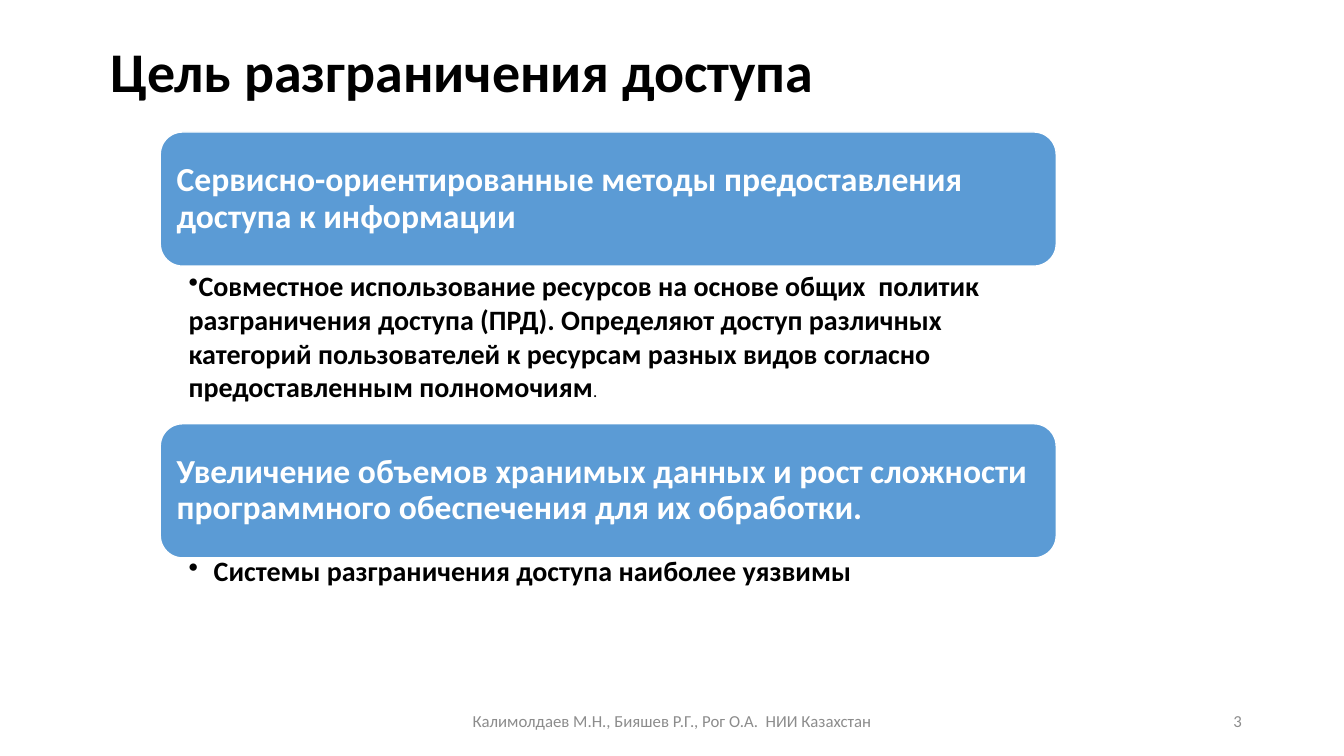
from lxml.etree import SubElement
from pptx import Presentation
from pptx.dml.color import RGBColor
from pptx.enum.shapes import MSO_SHAPE
from pptx.enum.text import MSO_ANCHOR, PP_ALIGN
from pptx.oxml.ns import qn
from pptx.util import Pt

BLACK = RGBColor(0x00, 0x00, 0x00)
WHITE = RGBColor(0xFF, 0xFF, 0xFF)
BLUE = RGBColor(0x5B, 0x9B, 0xD5)
GRAY = RGBColor(0x8C, 0x8C, 0x8C)

LIST_LEFT, LIST_WIDTH = 114.5, 640
HEADING_HEIGHT = 95.8
FOOTER_TOP, FOOTER_HEIGHT = 500.4, 28.8


class SlideBuilder:
    """Holds the text style and the current page."""

    font_name = "Calibri"

    def __init__(self, page):
        self.page = page

    def style(self, span, size, color, bold=False):
        span.font.name = self.font_name
        span.font.size = Pt(size)
        span.font.color.rgb = color
        span.font.bold = bold

    def text(self, left, top, width, height, words, size, color, bold=False,
             align=PP_ALIGN.LEFT, anchor=MSO_ANCHOR.TOP):
        box = self.page.shapes.add_textbox(Pt(left), Pt(top), Pt(width), Pt(height))
        frame = box.text_frame
        frame.word_wrap = True
        frame.vertical_anchor = anchor
        frame.text = words
        para = frame.paragraphs[0]
        para.alignment = align
        self.style(para.runs[0], size, color, bold)
        return box

    def heading(self, top, words):
        box = self.page.shapes.add_shape(
            MSO_SHAPE.ROUNDED_RECTANGLE,
            Pt(LIST_LEFT), Pt(top), Pt(LIST_WIDTH), Pt(HEADING_HEIGHT))
        box.shadow.inherit = False
        box.fill.solid()
        box.fill.fore_color.rgb = BLUE
        box.line.color.rgb = WHITE
        box.line.width = Pt(1)
        frame = box.text_frame
        frame.word_wrap = True
        frame.vertical_anchor = MSO_ANCHOR.MIDDLE
        frame.text = words
        para = frame.paragraphs[0]
        para.alignment = PP_ALIGN.LEFT
        para.line_spacing = 0.9
        self.style(para.runs[0], 24, WHITE, bold=True)

    def bullet(self, top, height, words, hanging=0, line_spacing=1.0):
        box = self.text(LIST_LEFT, top, LIST_WIDTH, height, words, 20, BLACK, bold=True)
        frame = box.text_frame
        frame.margin_left, frame.margin_right = Pt(20.2), Pt(11.5)
        frame.margin_top = frame.margin_bottom = Pt(2)
        para = frame.paragraphs[0]
        para.level = 1
        para.line_spacing = line_spacing
        # Bullet sign and hanging indent
        properties = para.runs[0].font._element.getparent().getparent().find(qn("a:pPr"))
        properties.set("marL", str(Pt(hanging)))
        properties.set("indent", str(-Pt(hanging)))
        SubElement(properties, qn("a:buChar")).set("char", "•")
        return para


def main():
    deck = Presentation()
    deck.slide_width, deck.slide_height = Pt(960), Pt(540)
    builder = SlideBuilder(deck.slides.add_slide(deck.slide_layouts[6]))

    # Title
    builder.text(72, 22.3, 816.5, 55.4, "Цель разграничения доступа", 40, BLACK, bold=True)

    # First goal
    builder.heading(94.3, "Сервисно-ориентированные методы предоставления доступа к информации")
    para = builder.bullet(
        190, 103,
        "Совместное использование ресурсов на основе общих  политик разграничения "
        "доступа (ПРД). Определяют доступ различных категорий пользователей к ресурсам "
        "разных видов согласно предоставленным полномочиям")
    full_stop = para.add_run()
    full_stop.text = "."
    builder.style(full_stop, 12, BLACK)

    # Second goal
    builder.heading(302.7, "Увеличение объемов хранимых данных и рост сложности "
                           "программного обеспечения для их обработки.")
    builder.bullet(396, 85, "Системы разграничения доступа наиболее уязвимы",
                   hanging=18, line_spacing=0.9)

    # Footer and page number
    builder.text(318.2, FOOTER_TOP, 324, FOOTER_HEIGHT,
                 "Калимолдаев М.Н., Бияшев Р.Г., Рог О.А.  НИИ Казахстан",
                 12, GRAY, align=PP_ALIGN.CENTER, anchor=MSO_ANCHOR.MIDDLE)
    builder.text(678.2, FOOTER_TOP, 216, FOOTER_HEIGHT, "3",
                 12, GRAY, align=PP_ALIGN.RIGHT, anchor=MSO_ANCHOR.MIDDLE)

    deck.save("out.pptx")


if __name__ == "__main__":
    main()
